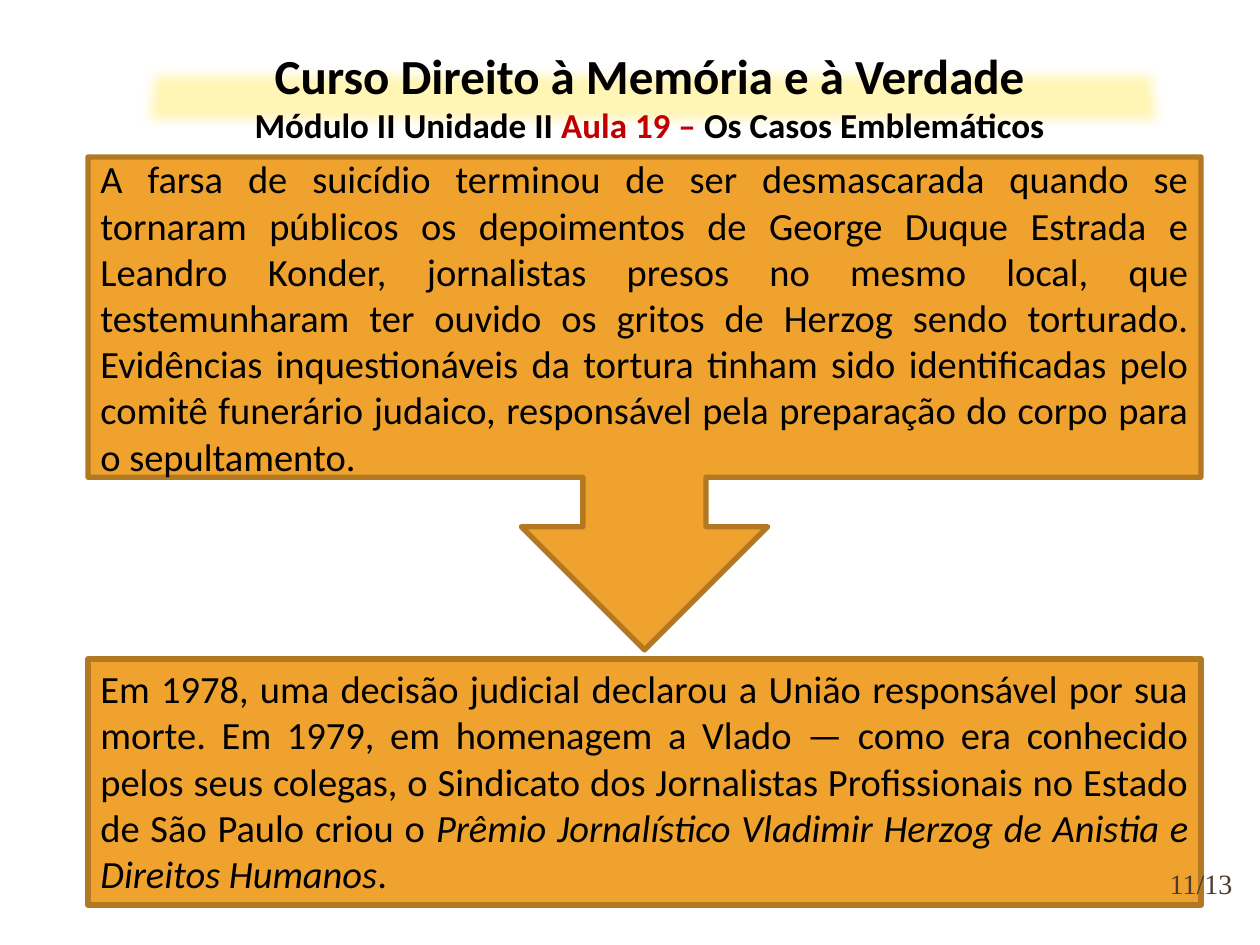
from dataclasses import dataclass

import lxml.etree
import pptx
import pptx.dml.color
import pptx.enum.shapes
import pptx.enum.text
import pptx.oxml.ns
import pptx.util

PX = 914400 / 126
SHAPE = pptx.enum.shapes.MSO_SHAPE
ALIGN = pptx.enum.text.PP_ALIGN
ANCHOR = pptx.enum.text.MSO_ANCHOR


@dataclass(frozen=True)
class Theme:
    body_font: str = "Calibri"
    number_font: str = "Times New Roman"
    ink: str = "000000"
    accent: str = "C00000"
    number_ink: str = "4E3B30"
    panel: str = "F0A22E"
    border: str = "B27822"
    glow: str = "FFF5B5"
    title_size: int = 28
    subtitle_size: int = 20
    body_size: int = 22
    number_size: int = 16
    border_width: int = 3


THEME = Theme()


def px(*lengths):
    return [round(length * PX) for length in lengths]


def rgb(value):
    return pptx.dml.color.RGBColor.from_string(value)


def write_para(para, spans, size, align, font=THEME.body_font, bold=False):
    para.alignment = align
    for text, color, italic in spans:
        span = para.add_run()
        span.text = text
        span.font.name = font
        span.font.size = pptx.util.Pt(size)
        span.font.bold = bold
        span.font.italic = italic
        span.font.color.rgb = rgb(color)


def add_panel(page, kind, place, anchor, spans):
    panel = page.shapes.add_shape(kind, *px(*place))
    panel.shadow.inherit = False
    panel.fill.solid()
    panel.fill.fore_color.rgb = rgb(THEME.panel)
    panel.line.color.rgb = rgb(THEME.border)
    panel.line.width = pptx.util.Pt(THEME.border_width)
    frame = panel.text_frame
    frame.word_wrap = True
    frame.vertical_anchor = anchor
    write_para(frame.paragraphs[0], spans, THEME.body_size, ALIGN.JUSTIFY)


def add_glow(page, place, radius):
    band = page.shapes.add_shape(SHAPE.TRAPEZOID, *px(*place))
    band.adjustments[0] = 0.13
    band.fill.solid()
    band.fill.fore_color.rgb = rgb(THEME.glow)
    band.line.fill.background()
    band.shadow.inherit = False
    effects = band.element.spPr.find(pptx.oxml.ns.qn("a:effectLst"))
    soft_edge = lxml.etree.SubElement(effects, pptx.oxml.ns.qn("a:softEdge"))
    soft_edge.set("rad", str(px(radius)[0]))


def add_title(page, place):
    box = page.shapes.add_textbox(*px(*place))
    frame = box.text_frame
    frame.word_wrap = True
    title = [("Curso Direito à Memória e à Verdade", THEME.ink, False)]
    subtitle = [
        ("Módulo II Unidade II ", THEME.ink, False),
        ("Aula 19 – ", THEME.accent, False),
        ("Os Casos Emblemáticos", THEME.ink, False),
    ]
    write_para(frame.paragraphs[0], title, THEME.title_size, ALIGN.CENTER, bold=True)
    write_para(frame.add_paragraph(), subtitle, THEME.subtitle_size, ALIGN.CENTER, bold=True)


def add_page_number(page, place, text):
    box = page.shapes.add_textbox(*px(*place))
    frame = box.text_frame
    frame.word_wrap = True
    frame.vertical_anchor = ANCHOR.MIDDLE
    frame.margin_left = frame.margin_right = frame.margin_top = frame.margin_bottom = 0
    write_para(frame.paragraphs[0], [(text, THEME.number_ink, False)],
               THEME.number_size, ALIGN.CENTER, THEME.number_font)


def main():
    deck = pptx.Presentation()
    deck.slide_width, deck.slide_height = px(1260, 945)
    page = deck.slides.add_slide(deck.slide_layouts[6])
    add_panel(page, SHAPE.RECTANGLE, (88, 659, 1113, 246), ANCHOR.TOP, [
        ("Em 1978, uma decisão judicial declarou a União responsável por sua morte. "
         "Em 1979, em homenagem a Vlado — como era conhecido pelos seus colegas, "
         "o Sindicato dos Jornalistas Profissionais no Estado de São Paulo criou o ",
         THEME.ink, False),
        ("Prêmio Jornalístico Vladimir Herzog de Anistia e Direitos Humanos",
         THEME.ink, True),
        (".", THEME.ink, False),
    ])
    add_panel(page, SHAPE.DOWN_ARROW_CALLOUT, (88, 157, 1113, 493), ANCHOR.MIDDLE, [
        ("A farsa de suicídio terminou de ser desmascarada quando se tornaram públicos "
         "os depoimentos de George Duque Estrada e Leandro Konder, jornalistas presos "
         "no mesmo local, que testemunharam ter ouvido os gritos de Herzog sendo "
         "torturado. Evidências inquestionáveis da tortura tinham sido identificadas "
         "pelo comitê funerário judaico, responsável pela preparação do corpo para "
         "o sepultamento.", THEME.ink, False),
    ])
    add_glow(page, (137, 67, 1030, 62), 12)
    add_title(page, (128, 39, 1043, 115))
    add_page_number(page, (1159, 852, 84, 63), "11/13")
    deck.save("out.pptx")


if __name__ == "__main__":
    main()
